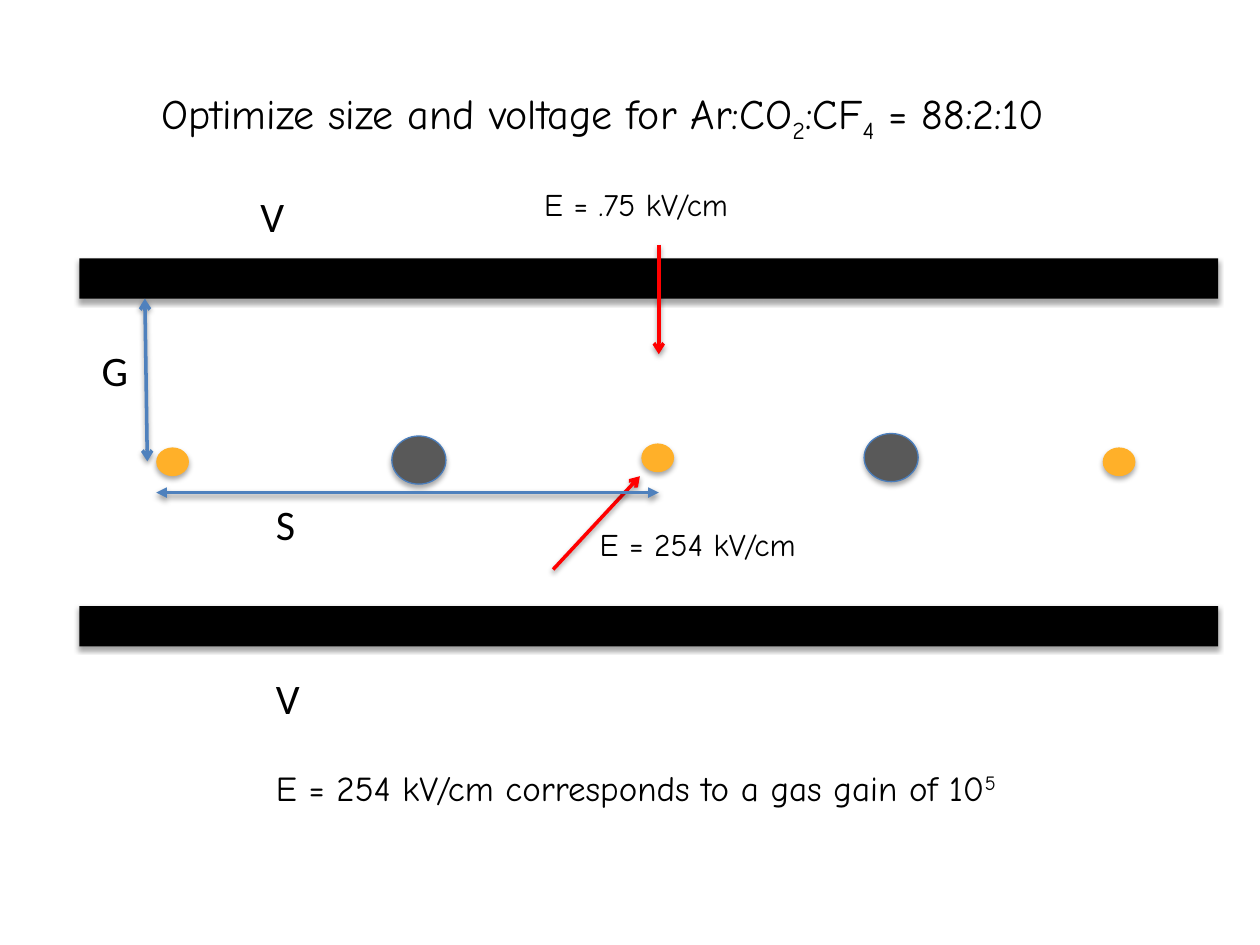
from dataclasses import dataclass

from lxml import etree
from pptx import Presentation
from pptx.dml.color import RGBColor
from pptx.enum.shapes import MSO_CONNECTOR, MSO_SHAPE
from pptx.enum.text import MSO_ANCHOR, MSO_AUTO_SIZE, PP_ALIGN
from pptx.oxml.ns import qn
from pptx.util import Cm, Pt

RECT, OVAL = MSO_SHAPE.RECTANGLE, MSO_SHAPE.OVAL
STRAIGHT = MSO_CONNECTOR.STRAIGHT
TOP, MIDDLE = MSO_ANCHOR.TOP, MSO_ANCHOR.MIDDLE
FIXED = MSO_AUTO_SIZE.NONE
LEFT, CENTER = PP_ALIGN.LEFT, PP_ALIGN.CENTER
TITLE_ONLY = 5


@dataclass(frozen=True)
class Theme:
    """Colours, fonts and type sizes of the slide."""
    black: str = "000000"
    gold: str = "FFB029"
    gray: str = "595959"
    edge: str = "4B7EBC"
    blue: str = "4F81BD"
    red: str = "FF0000"
    plain: str = "Calibri"
    comic: str = "Comic Neue"
    large: int = 24
    medium: int = 20
    small: int = 18
    stroke: float = 2
    thin: float = 0.75


class Sketch:
    """Draws the parts of the wire chamber on one slide."""

    def __init__(self, slide, theme):
        self.slide = slide
        self.theme = theme

    def shade(self, shape, alpha, drop):
        props = shape._element.spPr
        for old in props.findall(qn("a:effectLst")):
            props.remove(old)
        effects = etree.SubElement(props, qn("a:effectLst"))
        outer = etree.SubElement(effects, qn("a:outerShdw"), blurRad=str(Pt(3.1)),
                                 dist=str(Pt(drop)), dir="5400000", rotWithShape="0")
        color = etree.SubElement(outer, qn("a:srgbClr"), val=self.theme.black)
        etree.SubElement(color, qn("a:alpha"), val=str(alpha * 1000))

    def solid(self, kind, x, y, w, h, fill, edge=None):
        shape = self.slide.shapes.add_shape(kind, Cm(x), Cm(y), Cm(w), Cm(h))
        shape.fill.solid()
        shape.fill.fore_color.rgb = RGBColor.from_string(fill)
        if edge:
            shape.line.color.rgb = RGBColor.from_string(edge)
            shape.line.width = Pt(self.theme.thin)
        else:
            shape.line.fill.background()
        self.shade(shape, 35, 1.8)

    def plate(self, y):
        self.solid(RECT, 1.6, y, 22.96, 0.81, self.theme.black)

    def anode(self, x, y):
        self.solid(OVAL, x, y, 0.66, 0.58, self.theme.gold)

    def cathode(self, x, y):
        self.solid(OVAL, x, y, 1.09, 0.97, self.theme.gray, self.theme.edge)

    def arrow(self, start, end, color, tip="arrow", double=False):
        line = self.slide.shapes.add_connector(STRAIGHT, *map(Cm, start + end))
        line.line.color.rgb = RGBColor.from_string(color)
        line.line.width = Pt(self.theme.stroke)
        stroke = line.line._get_or_add_ln()
        for name in ("headEnd", "tailEnd") if double else ("tailEnd",):
            etree.SubElement(stroke, qn(f"a:{name}"), type=tip)
        self.shade(line, 38, 1.6)

    def letter(self, frame, runs, size, font, align=LEFT, anchor=TOP):
        frame.word_wrap = True
        frame.auto_size = FIXED
        frame.vertical_anchor = anchor
        para = frame.paragraphs[0]
        para.alignment = align
        for words, base in runs:
            run = para.add_run()
            run.text = words
            run.font.size = Pt(size)
            run.font.name = font
            run.font.color.rgb = RGBColor.from_string(self.theme.black)
            if base:
                run._r.get_or_add_rPr().set("baseline", str(base * 1000))

    def title(self, x, y, w, h, runs):
        shape = self.slide.shapes.title
        shape.left, shape.top, shape.width, shape.height = map(Cm, (x, y, w, h))
        self.letter(shape.text_frame, runs, self.theme.large, self.theme.comic, CENTER, MIDDLE)

    def note(self, x, y, w, h, runs, size, font):
        box = self.slide.shapes.add_textbox(Cm(x), Cm(y), Cm(w), Cm(h))
        self.letter(box.text_frame, runs, size, font)

    def field(self, x, y, words):
        self.note(x, y, 5.11, 1.02, [(words, 0)], self.theme.small, self.theme.comic)

    def symbol(self, x, y, words):
        self.note(x, y, 1.17, 1.27, [(words, 0)], self.theme.large, self.theme.plain)


def main():
    deck = Presentation()
    deck.slide_width, deck.slide_height = Cm(25.4), Cm(19.05)
    theme = Theme()
    sketch = Sketch(deck.slides.add_slide(deck.slide_layouts[TITLE_ONLY]), theme)

    sketch.title(1.4, 1.7, 21.51, 1.27, [
        ("Optimize size and voltage for Ar:CO", 0), ("2", -25), (":CF", 0),
        ("4", -25), (" = 88:2:10", 0)])

    for y in (5.21, 12.22):
        sketch.plate(y)
    for x, y in ((3.15, 9.02), (12.93, 8.94), (22.23, 9.02)):
        sketch.anode(x, y)
    for x, y in ((7.9, 8.79), (17.42, 8.74)):
        sketch.cathode(x, y)

    sketch.arrow((13.28, 4.93), (13.28, 7.14), theme.red)
    sketch.arrow((2.97, 9.3), (2.92, 6.02), theme.blue, double=True)
    sketch.arrow((11.15, 11.48), (12.9, 9.6), theme.red)
    sketch.arrow((3.15, 9.93), (13.28, 9.93), theme.blue, "triangle", True)

    sketch.field(10.72, 3.61, "E = .75 kV/cm")
    sketch.field(11.84, 10.46, "E = 254 kV/cm")
    for x, y, words in ((1.8, 6.83, "G"), (5, 3.71, "V"), (5.31, 13.44, "V"), (5.31, 9.93, "S")):
        sketch.symbol(x, y, words)
    sketch.note(5.31, 15.32, 16.92, 1.12, [
        ("E = 254 kV/cm corresponds to a gas gain of 10", 0), ("5", 30)],
        theme.medium, theme.comic)

    deck.save("out.pptx")


if __name__ == "__main__":
    main()
